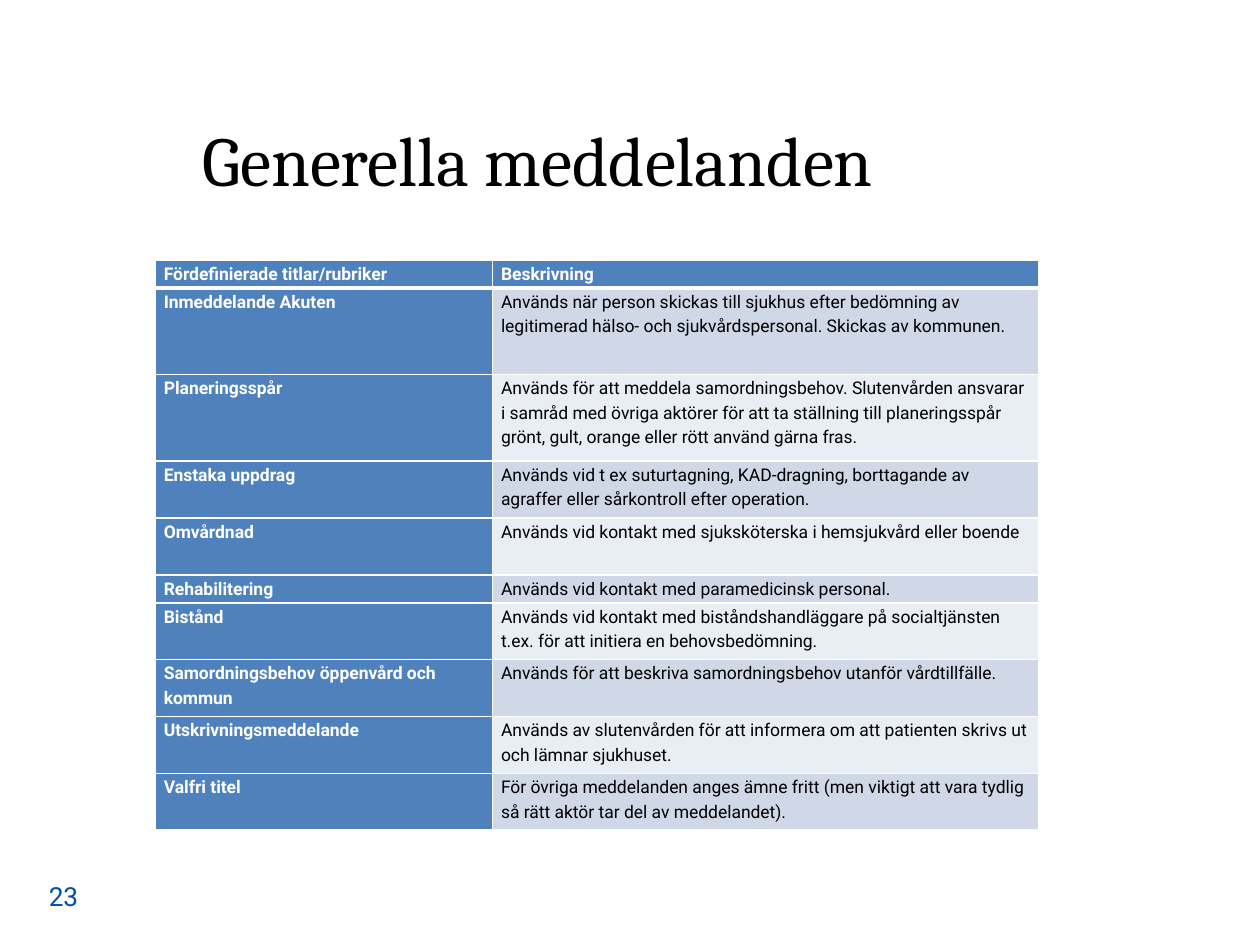
from lxml.etree import SubElement
from pptx import Presentation
from pptx.dml.color import RGBColor
from pptx.enum.text import MSO_ANCHOR, PP_ALIGN
from pptx.oxml.ns import qn
from pptx.util import Pt


def color(hex_value):
    return RGBColor.from_string(hex_value)


def add_run(paragraph, text, size, font, hex_value, bold=False):
    run = paragraph.add_run()
    run.text = text
    run.font.size = Pt(size)
    run.font.name = font
    run.font.bold = bold
    run.font.color.rgb = color(hex_value)


messages = [
    ("Fördefinierade titlar/rubriker", "Beskrivning", 16),
    ("Inmeddelande Akuten", "Används när person skickas till sjukhus efter bedömning av legitimerad hälso- och sjukvårdspersonal. Skickas av kommunen.", 49.5),
    ("Planeringsspår", "Används för att meddela samordningsbehov. Slutenvården ansvarar i samråd med övriga aktörer för att ta ställning till planeringsspår grönt, gult, orange eller rött använd gärna fras.", 49.5),
    ("Enstaka uppdrag", "Används vid t ex suturtagning, KAD-dragning, borttagande av agraffer eller sårkontroll efter operation.", 32.5),
    ("Omvårdnad", "Används vid kontakt med sjuksköterska i hemsjukvård eller boende", 32.5),
    ("Rehabilitering", "Används vid kontakt med paramedicinsk personal.", 16),
    ("Bistånd", "Används vid kontakt med biståndshandläggare på socialtjänsten t.ex. för att initiera en behovsbedömning.", 32.5),
    ("Samordningsbehov öppenvård och kommun", "Används för att beskriva samordningsbehov utanför vårdtillfälle.", 32.5),
    ("Utskrivningsmeddelande", "Används av slutenvården för att informera om att patienten skrivs ut och lämnar sjukhuset.", 32.5),
    ("Valfri titel", "För övriga meddelanden anges ämne fritt (men viktigt att vara tydlig så rätt aktör tar del av meddelandet).", 32.5),
]

presentation = Presentation()
presentation.slide_width = Pt(720)
presentation.slide_height = Pt(540)
slide = presentation.slides.add_slide(presentation.slide_layouts[6])

title = slide.shapes.add_textbox(Pt(108.7), Pt(41), Pt(558.7), Pt(99.4)).text_frame
title.word_wrap = True
title.vertical_anchor = MSO_ANCHOR.MIDDLE
add_run(title.paragraphs[0], "Generella meddelanden", 40, "Cambria", "000000")

total_height = sum(height for _, _, height in messages)
overview = slide.shapes.add_table(len(messages), 2, Pt(88.6), Pt(148.5), Pt(504.7), Pt(total_height)).table
overview.columns[0].width = Pt(192.7)
overview.columns[1].width = Pt(312)

for row, (heading, description, height) in enumerate(messages):
    overview.rows[row].height = Pt(height)
    for column, text in enumerate((heading, description)):
        cell = overview.cell(row, column)
        is_heading = row == 0 or column == 0
        cell.margin_left = cell.margin_right = Pt(5)
        cell.margin_top = cell.margin_bottom = Pt(0)
        cell.fill.solid()
        band = "D0D8E8" if row % 2 else "E9EDF4"
        cell.fill.fore_color.rgb = color("4F81BD" if is_heading else band)

        paragraph = cell.text_frame.paragraphs[0]
        paragraph.line_spacing = Pt(14)
        paragraph.space_after = Pt(6)
        add_run(paragraph, text, 10, "Roboto", "FFFFFF" if is_heading else "000000", is_heading)

        properties = cell._tc.get_or_add_tcPr()
        for position, side in enumerate(("lnL", "lnR", "lnT", "lnB")):
            under_header = (row, side) in ((0, "lnB"), (1, "lnT"))
            border = SubElement(properties, qn(f"a:{side}"), w=str(Pt(3 if under_header else 1)))
            border_fill = SubElement(border, qn("a:solidFill"))
            SubElement(border_fill, qn("a:srgbClr"), val="FFFFFF")
            properties.insert(position, border)

page_number = slide.shapes.add_textbox(Pt(12.2), Pt(496), Pt(39.6), Pt(28.8)).text_frame
page_number.word_wrap = True
page_number.vertical_anchor = MSO_ANCHOR.BOTTOM
page_number.paragraphs[0].alignment = PP_ALIGN.RIGHT
add_run(page_number.paragraphs[0], "23", 15, "Roboto", "0050A5")

presentation.save("out.pptx")
